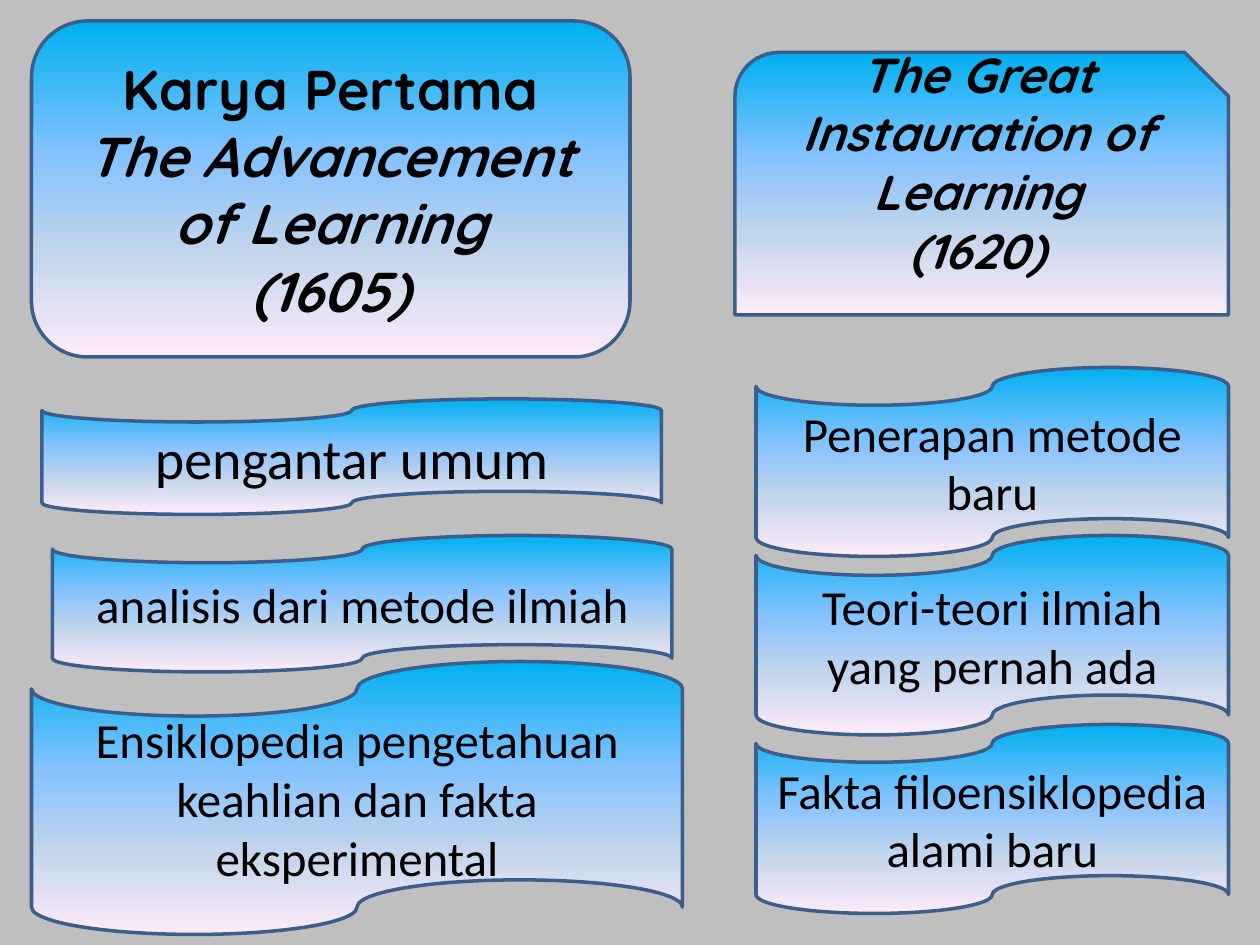
from dataclasses import dataclass

from lxml import etree
from pptx import Presentation
from pptx.dml.color import RGBColor
from pptx.enum import shapes, text
from pptx.oxml import ns
from pptx.util import Pt


@dataclass(frozen=True)
class Theme:
    background: str = "BFBFBF"
    outline: str = "3A5F8C"
    ink: str = "000000"
    sky: tuple = ((0, "00B0F0"), (40, "85C2FF"), (70, "C4D6EB"), (100, "FFEBFA"))
    outline_width: float = 2
    large: float = 32
    normal: float = 28
    title_font: str = "Quicksand"
    body_font: str = "Calibri"


class Board:
    def __init__(self, slide, theme):
        self.slide = slide
        self.theme = theme
        fill = slide.background.fill
        fill.solid()
        fill.fore_color.rgb = RGBColor.from_string(theme.background)

    def panel(self, preset, box, lines, size, font, bold=False, bottom_inset=3.6):
        """Add a shape with the sky gradient; lines are (text, italic) pairs."""
        panel = self.slide.shapes.add_shape(preset, *(Pt(length) for length in box))
        panel.shadow.inherit = False
        self.sky_fill(panel)
        panel.line.color.rgb = RGBColor.from_string(self.theme.outline)
        panel.line.width = Pt(self.theme.outline_width)

        frame = panel.text_frame
        frame.word_wrap = True
        frame.vertical_anchor = text.MSO_ANCHOR.MIDDLE
        frame.margin_bottom = Pt(bottom_inset)
        for index, (words, italic) in enumerate(lines):
            paragraph = frame.add_paragraph() if index else frame.paragraphs[0]
            paragraph.alignment = text.PP_ALIGN.CENTER
            run = paragraph.add_run()
            run.text = words
            style = {"size": Pt(size), "name": font, "bold": bold, "italic": italic}
            for name, value in style.items():
                setattr(run.font, name, value)
            run.font.color.rgb = RGBColor.from_string(self.theme.ink)

    def sky_fill(self, panel):
        panel.fill.gradient()
        panel.fill.gradient_angle = 270
        stops = panel._element.spPr.find(".//" + ns.qn("a:gsLst"))
        for stop in list(stops):
            stops.remove(stop)
        for percent, color in self.theme.sky:
            stop = etree.SubElement(stops, ns.qn("a:gs"), pos=str(percent * 1000))
            etree.SubElement(stop, ns.qn("a:srgbClr"), val=color)

    def title(self, preset, box, lines, size, bottom_inset=3.6):
        self.panel(preset, box, lines, size, self.theme.title_font, True, bottom_inset)

    def tape(self, box, lines, size):
        self.panel(shapes.MSO_SHAPE.FLOWCHART_PUNCHED_TAPE, box,
                   [(line, False) for line in lines], size, self.theme.body_font)


def main():
    theme = Theme()
    deck = Presentation()
    deck.slide_width, deck.slide_height = Pt(720), Pt(540)
    board = Board(deck.slides.add_slide(deck.slide_layouts[6]), theme)

    board.title(shapes.MSO_SHAPE.ROUNDED_RECTANGLE, (18, 12, 342, 192),
                [("Karya Pertama", False), ("The Advancement of Learning", True),
                 ("(1605)", True)], theme.large)
    board.title(shapes.MSO_SHAPE.SNIP_ROUND_RECTANGLE, (420, 30, 282, 150),
                [("The Great Instauration of Learning", True), ("(1620)", True)],
                theme.normal, bottom_inset=36)

    first_work = [
        ((24, 228, 354, 66), "pengantar umum", theme.large),
        ((30, 306, 354, 78), "analisis dari metode ilmiah", theme.normal),
        ((18, 378, 372, 156),
         "Ensiklopedia pengetahuan keahlian dan fakta eksperimental", theme.normal),
    ]
    for box, topic, size in first_work:
        board.tape(box, [topic], size)

    second_work = [
        (210, 108, ["Penerapan metode baru"]),
        (306, 114, ["Teori-teori ilmiah", "yang pernah ada"]),
        (414, 108, ["Fakta filoensiklopedia alami baru"]),
    ]
    for top, height, topic in second_work:
        board.tape((432, top, 270, height), topic, theme.normal)

    deck.save("out.pptx")


if __name__ == "__main__":
    main()
